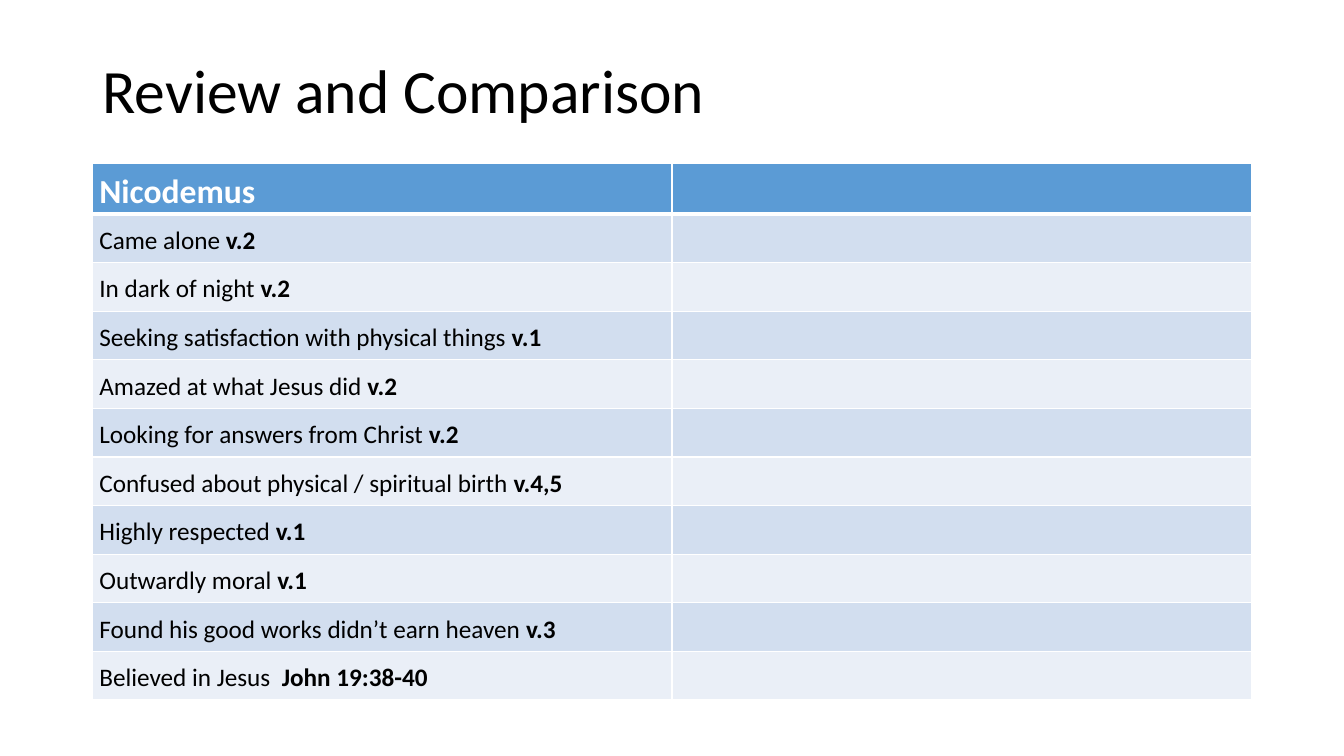
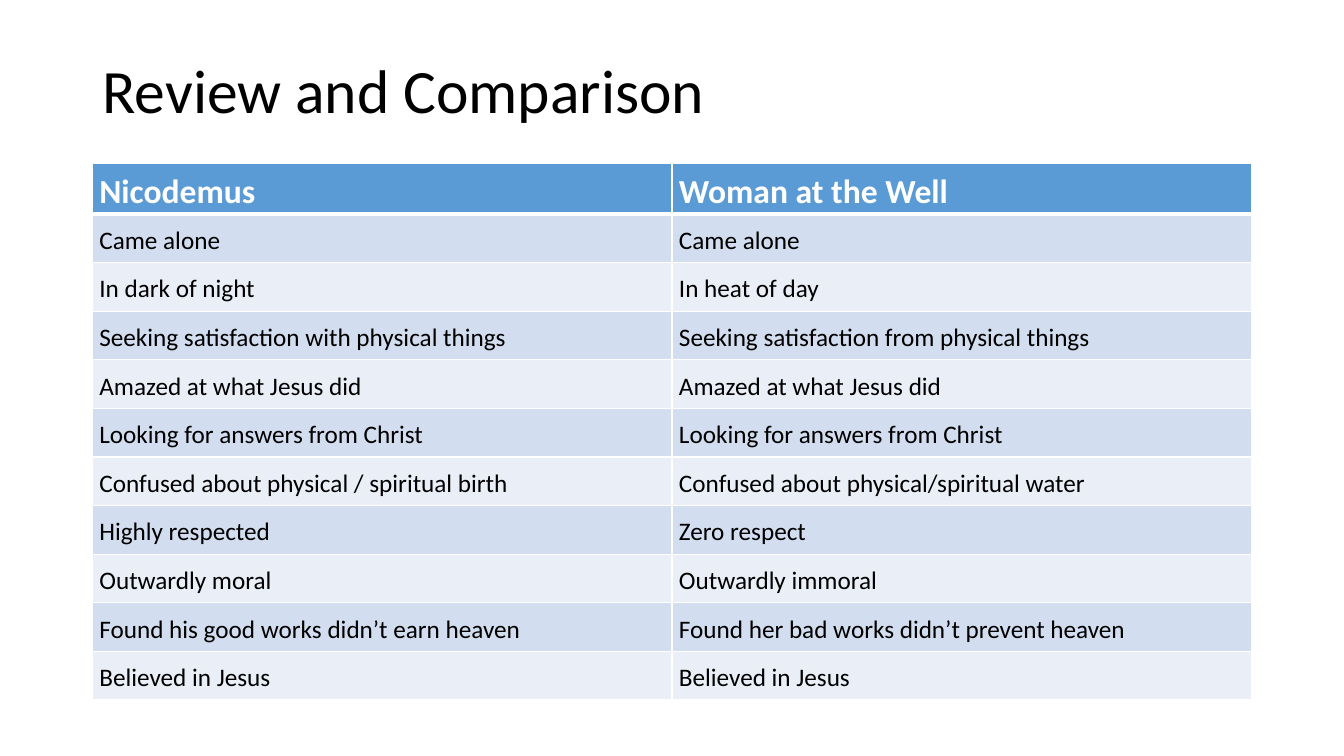
from dataclasses import dataclass

from lxml import etree
from pptx import Presentation
from pptx.dml.color import RGBColor
from pptx.enum.text import MSO_ANCHOR, MSO_AUTO_SIZE, PP_ALIGN
from pptx.oxml.ns import qn
from pptx.util import Emu, Pt

MIDDLE = MSO_ANCHOR.MIDDLE
LEFT = PP_ALIGN.LEFT
FIXED = MSO_AUTO_SIZE.NONE
SCALE = 6350
WIDE, HIGH = 1920, 1080
EDGE, SPAN = 132, 1656
TITLE = "Review and Comparison"
HEADS = ("Nicodemus", "Woman at the Well")
TOPICS = [
    ("Came alone", "v.2", "Came alone"),
    ("In dark of night", "v.2", "In heat of day"),
    ("Seeking satisfaction with physical things", "v.1",
     "Seeking satisfaction from physical things"),
    ("Amazed at what Jesus did", "v.2", "Amazed at what Jesus did"),
    ("Looking for answers from Christ", "v.2", "Looking for answers from Christ"),
    ("Confused about physical / spiritual birth", "v.4,5",
     "Confused about physical/spiritual water"),
    ("Highly respected", "v.1", "Zero respect"),
    ("Outwardly moral", "v.1", "Outwardly immoral"),
    ("Found his good works didn’t earn heaven", "v.3",
     "Found her bad works didn’t prevent heaven"),
    ("Believed in Jesus", " John 19:38-40", "Believed in Jesus"),
]


@dataclass(frozen=True)
class Theme:
    """Colours, font and type sizes of the deck."""
    font: str = "Calibri"
    ink: str = "000000"
    paper: str = "FFFFFF"
    head: str = "5B9BD5"
    bands: tuple = ("D2DEEF", "EAEFF7")
    title: int = 44
    label: int = 24
    body: int = 18
    thin: int = 1
    thick: int = 3


def px(size):
    """Turn a length in px into EMU."""
    return Emu(size * SCALE)


def assign(item, values):
    """Set each attribute of an item from a dict."""
    for name, value in values.items():
        setattr(item, name, value)


class Deck:
    """Hold the theme and the current slide and draw elements on it."""

    def __init__(self, theme):
        """Start an empty wide deck."""
        self.theme = theme
        self.show = Presentation()
        assign(self.show, {"slide_width": px(WIDE), "slide_height": px(HIGH)})
        self.slide = None

    def text(self, para, runs, size, color, pitch):
        """Fill a paragraph with (words, bold) runs."""
        assign(para, {"line_spacing": pitch, "alignment": LEFT})
        for words, bold in runs:
            run = para.add_run()
            run.text = words
            assign(run.font, {"name": self.theme.font, "size": Pt(size), "bold": bold})
            run.font.color.rgb = RGBColor.from_string(color)

    def page(self, words):
        """Add a slide with its title."""
        self.slide = self.show.slides.add_slide(self.show.slide_layouts[5])
        title = self.slide.shapes.title
        assign(title, {"left": px(EDGE), "top": px(58),
                       "width": px(SPAN), "height": px(150)})
        frame = title.text_frame
        assign(frame, {"vertical_anchor": MIDDLE, "word_wrap": True, "auto_size": FIXED})
        self.text(frame.paragraphs[0], [(words, False)],
                  self.theme.title, self.theme.ink, 0.9)

    def border(self, cell, widths):
        """Draw the four sides of a cell."""
        props = cell._tc.get_or_add_tcPr()
        for side, width in widths.items():
            line = etree.SubElement(props, qn(f"a:ln{side}"), w=str(Pt(width)))
            fill = etree.SubElement(line, qn("a:solidFill"))
            etree.SubElement(fill, qn("a:srgbClr"), val=self.theme.paper)

    def cell(self, cell, row, runs):
        """Style and fill one cell of the table."""
        look = self.theme
        top = look.thick if row == 1 else look.thin
        base = look.thick if row == 0 else look.thin
        self.border(cell, {"L": look.thin, "R": look.thin, "T": top, "B": base})
        cell.fill.solid()
        shade = look.bands[(row - 1) % 2] if row else look.head
        cell.fill.fore_color.rgb = RGBColor.from_string(shade)
        assign(cell, {"vertical_anchor": MIDDLE, "margin_left": px(10),
                      "margin_right": px(10), "margin_top": 0, "margin_bottom": 0})
        size, color = (look.body, look.ink) if row else (look.label, look.paper)
        self.text(cell.text_frame.paragraphs[0], runs, size, color, 1.15)

    def table(self, rows):
        """Add a two-column table with a header and equal body rows."""
        head, body = px(73), px(694)
        grid = self.slide.shapes.add_table(
            len(rows), 2, px(EDGE), px(233), px(SPAN), Emu(head + body)).table
        for index, row in enumerate(rows):
            grid.rows[index].height = Emu(body // (len(rows) - 1)) if index else head
            for col, runs in enumerate(row):
                self.cell(grid.cell(index, col), index, runs)


def main():
    """Build both comparison slides."""
    deck = Deck(Theme())
    man, woman = ([(name, True)] for name in HEADS)
    verses = [(man, [])]
    pairs = [(man, woman)]
    for left, verse, right in TOPICS:
        verses.append(([(left + " ", False), (verse, True)], []))
        pairs.append(([(left, False)], [(right, False)]))
    for rows in (verses, pairs):
        deck.page(TITLE)
        deck.table(rows)
    deck.show.save("out.pptx")


if __name__ == "__main__":
    main()
